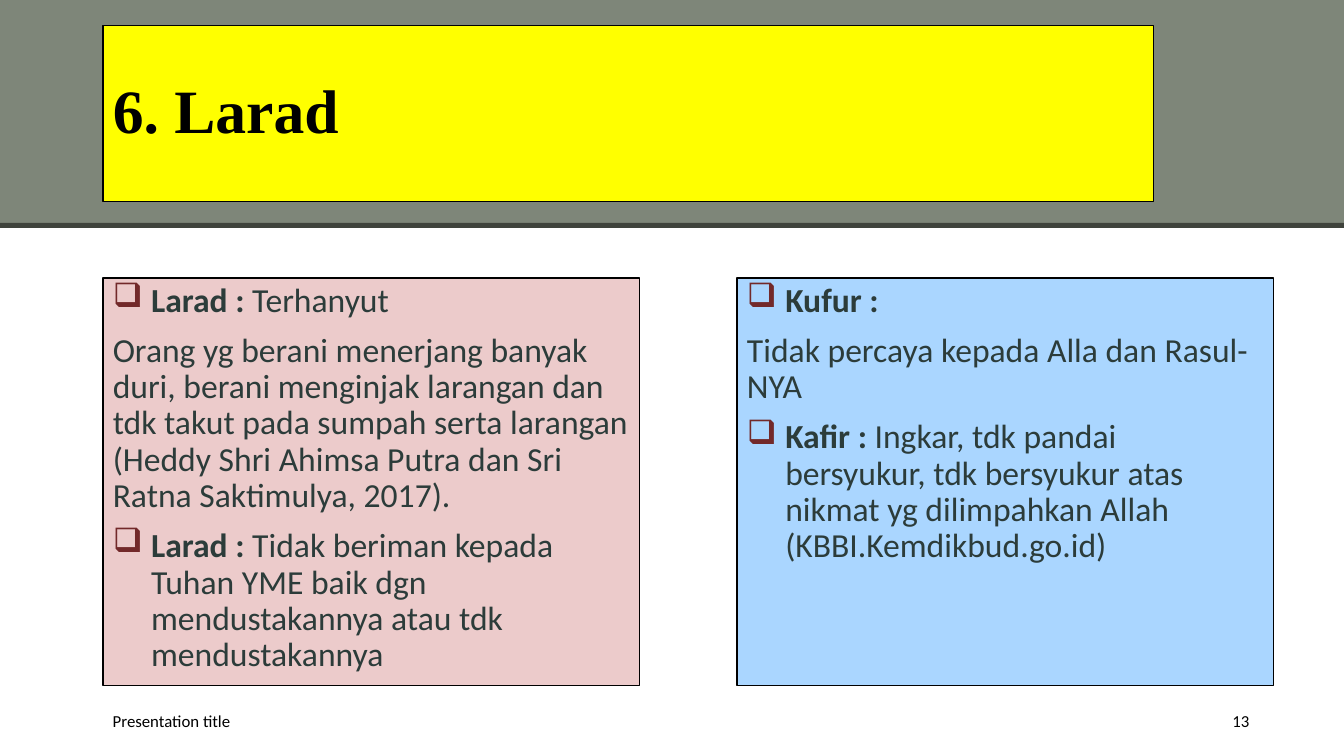
from lxml import etree
from pptx import Presentation, util as u
from pptx.dml.color import RGBColor
from pptx.enum import shapes, text
from pptx.oxml.ns import qn

HUES = {"band": "7E8679", "rule": "3F433C", "title": "FFFF00",
        "pink": "ECCBCB", "blue": "AAD6FF", "ink": "2C3C3A",
        "mark": "72292A", "black": "000000"}
LEFT, WIDE, STEP = 1.02, 5.32, 6.29  # column start, width and pitch
TOP, TALL = 2.76, 4.04
HANG = 0.38

deck = Presentation()
deck.slide_width, deck.slide_height = u.Inches(13.33), u.Inches(7.5)
slide = deck.slides.add_slide(deck.slide_layouts[6])


def add_box(spot, fill=None, edge=False, mid=True):
    """Add a wrapped box, plain text when no fill is named; return its frame."""
    spot = [u.Inches(n) for n in spot]
    if fill:
        box = slide.shapes.add_shape(shapes.MSO_SHAPE.RECTANGLE, *spot)
        box.shadow.inherit = False
        box.fill.solid()
        box.fill.fore_color.rgb = RGBColor.from_string(HUES[fill])
        if edge:
            box.line.color.rgb = RGBColor.from_string(HUES["black"])
            box.line.width = u.Pt(1)
        else:
            box.line.fill.background()
    else:
        box = slide.shapes.add_textbox(*spot)
    frame = box.text_frame
    frame.word_wrap = True
    anchor = text.MSO_ANCHOR
    frame.vertical_anchor = anchor.MIDDLE if mid else anchor.TOP
    return frame


def style(para, size, hue="black", face="Calibri", align="LEFT"):
    para.alignment = getattr(text.PP_ALIGN, align)
    for run in para.runs:
        run.font.size, run.font.name = u.Pt(size), face
        run.font.color.rgb = RGBColor.from_string(HUES[hue])


# Header
add_box((0, 0, 13.33, 2.24), "band")
add_box((0, 2.21, 13.33, 0.05), "rule")
title = add_box((LEFT, 0.25, 10.42, 1.75), "title", edge=True).paragraphs[0]
title.text = "6. Larad"
title.line_spacing = 0.9
style(title, 44, face="Times New Roman")
title.runs[0].font.bold = True

# Columns: each paragraph is a bold term and its text; a term brings a bullet
cols = [
    ("pink", [
        ("Larad : ", "Terhanyut"),
        ("", "Orang yg berani menerjang banyak duri, berani menginjak larangan "
             "dan tdk takut pada sumpah serta larangan (Heddy Shri Ahimsa Putra "
             "dan Sri Ratna Saktimulya, 2017)."),
        ("Larad : ", "Tidak beriman kepada Tuhan YME baik dgn mendustakannya "
                     "atau tdk mendustakannya")]),
    ("blue", [
        ("Kufur :", ""),
        ("", "Tidak percaya kepada Alla dan Rasul-NYA"),
        ("Kafir : ", "Ingkar, tdk pandai bersyukur, tdk bersyukur atas nikmat yg "
                     "dilimpahkan Allah (KBBI.Kemdikbud.go.id)")]),
]
for col, (fill, items) in enumerate(cols):
    spot = (LEFT + col * STEP, TOP, WIDE, TALL)
    frame = add_box(spot, fill, edge=True, mid=False)
    for row, (term, body) in enumerate(items):
        para = frame.add_paragraph() if row else frame.paragraphs[0]
        if term:
            props = para._p.get_or_add_pPr()
            props.set("marL", str(u.Inches(HANG)))
            props.set("indent", str(-u.Inches(HANG)))
            tint = etree.SubElement(props, qn("a:buClr"))
            etree.SubElement(tint, qn("a:srgbClr"), val=HUES["mark"])
            etree.SubElement(props, qn("a:buChar"), char="❑")
        para.line_spacing = 0.9
        para.space_before = u.Pt(10 if row else 0)
        for part, bold in ((term, True), (body, False)):
            if part:
                run = para.add_run()
                run.text = part
                run.font.bold = bold
        style(para, 24, "ink")

# Footer
for left, wide, words, align in ((LEFT, 4.5, "Presentation title", "LEFT"),
                                 (11.63, 0.86, "13", "RIGHT")):
    para = add_box((left, 6.95, wide, 0.4)).paragraphs[0]
    para.text = words
    style(para, 12, align=align)

deck.save("out.pptx")
